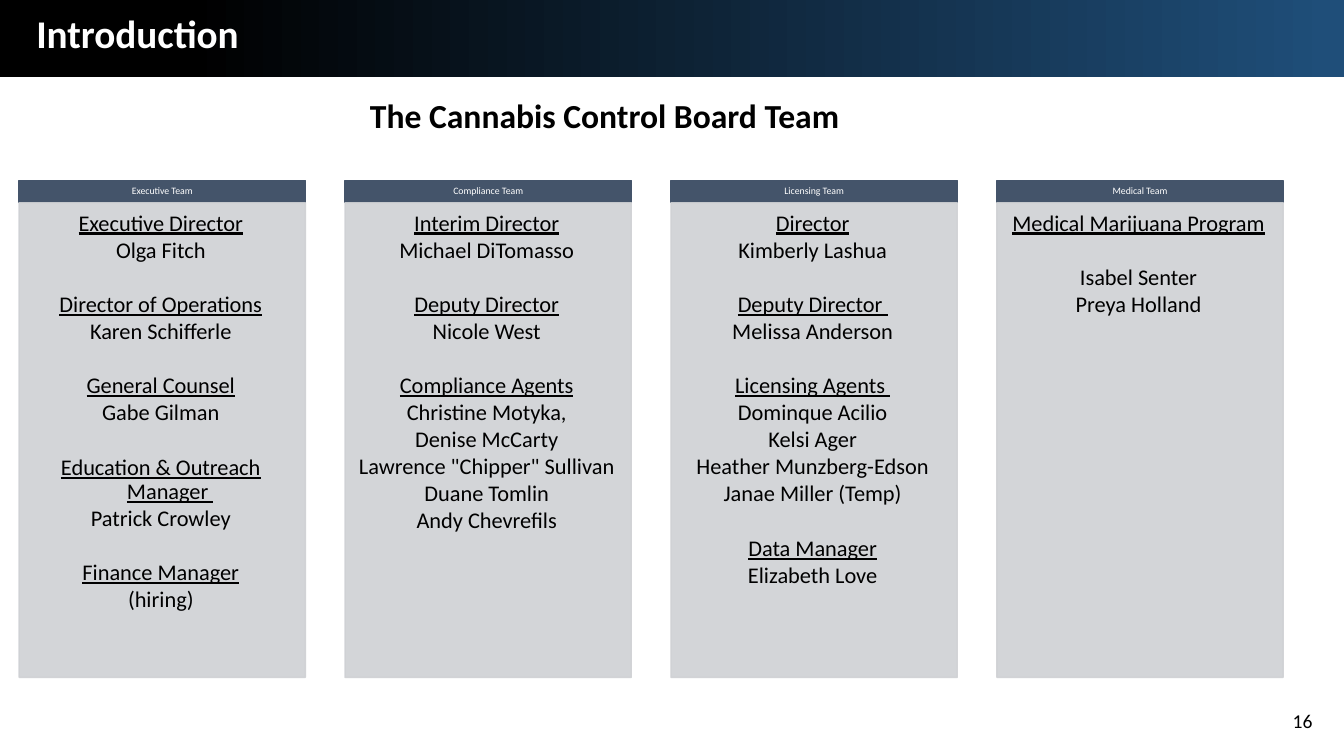
from dataclasses import dataclass

from lxml.etree import SubElement
from pptx import Presentation
from pptx.dml.color import RGBColor
from pptx.enum.shapes import MSO_SHAPE
from pptx.enum.text import MSO_ANCHOR, PP_ALIGN
from pptx.oxml.ns import qn
from pptx.shapes.autoshape import Shape
from pptx.slide import Slide
from pptx.text.text import TextFrame
from pptx.util import Pt

LEFT, STEP, WIDTH = 13.7, 232.8, 204.5
TOP, HEAD, BODY = 128.9, 15.9, 339.1
TIGHT, GAP = 2, 21.6


@dataclass
class Role:
    """A job title and the people who hold it."""
    title: str
    people: list[str]
    gap: float = TIGHT


@dataclass
class Team:
    """A column of the team chart."""
    name: str
    roles: list[Role]


TEAMS = [
    Team("Executive Team", [
        Role("Executive Director", ["Olga Fitch"]),
        Role("Director of Operations", ["Karen Schifferle"]),
        Role("General Counsel", ["Gabe Gilman"]),
        Role("Education & Outreach Manager ", ["Patrick Crowley"]),
        Role("Finance Manager", ["(hiring)"]),
    ]),
    Team("Compliance Team", [
        Role("Interim Director", ["Michael DiTomasso"]),
        Role("Deputy Director", ["Nicole West"]),
        Role("Compliance Agents", [
            "Christine Motyka,", "Denise McCarty", 'Lawrence "Chipper" Sullivan',
            "Duane Tomlin", "Andy Chevrefils"]),
    ]),
    Team("Licensing Team", [
        Role("Director", ["Kimberly Lashua"]),
        Role("Deputy Director ", ["Melissa Anderson"]),
        Role("Licensing Agents ", [
            "Dominque Acilio", "Kelsi Ager", "Heather Munzberg-Edson",
            "Janae Miller (Temp)"]),
        Role("Data Manager", ["Elizabeth Love"]),
    ]),
    Team("Medical Team", [
        Role("Medical Marijuana Program", ["Isabel Senter", "Preya Holland"], GAP),
    ]),
]


def rgb(code: str) -> RGBColor:
    """Turn a hex string into a colour."""
    return RGBColor.from_string(code)


def write(frame: TextFrame, text: str, *, size: float, color: str = "000000",
          bold: bool = False, under: bool = False, align: PP_ALIGN = PP_ALIGN.CENTER,
          before: float = 0, lead: float = 1, hang: float = 0) -> None:
    """Add one formatted paragraph to a frame."""
    para = frame.add_paragraph() if frame.text else frame.paragraphs[0]
    para.alignment = align
    para.line_spacing = lead
    para.space_before, para.space_after = Pt(before), Pt(0)
    if hang:
        props = para._p.get_or_add_pPr()
        props.set("marL", str(Pt(hang)))
        props.set("indent", str(Pt(-hang)))
    run = para.add_run()
    run.text = text
    font = run.font
    font.name, font.size = "Calibri", Pt(size)
    font.bold, font.underline = bold, under
    font.color.rgb = rgb(color)


def setup(frame: TextFrame, anchor: MSO_ANCHOR,
          insets: tuple[float, float, float, float] = (7.2, 3.6, 7.2, 3.6)) -> TextFrame:
    """Set wrap, anchor and insets of a frame."""
    frame.word_wrap = True
    frame.vertical_anchor = anchor
    (frame.margin_left, frame.margin_top,
     frame.margin_right, frame.margin_bottom) = map(Pt, insets)
    return frame


def add_box(slide: Slide, x: float, y: float, w: float, h: float,
            anchor: MSO_ANCHOR = MSO_ANCHOR.TOP) -> TextFrame:
    """Add a text box and return its frame."""
    box = slide.shapes.add_textbox(Pt(x), Pt(y), Pt(w), Pt(h))
    return setup(box.text_frame, anchor)


def add_rect(slide: Slide, x: float, y: float, w: float, h: float,
             color: str, alpha: int = 100) -> Shape:
    """Add a rectangle with a fill and line of one colour."""
    rect = slide.shapes.add_shape(MSO_SHAPE.RECTANGLE, Pt(x), Pt(y), Pt(w), Pt(h))
    rect.shadow.inherit = False
    rect.fill.solid()
    rect.fill.fore_color.rgb = rgb(color)
    rect.line.color.rgb = rgb(color)
    rect.line.width = Pt(1)
    if alpha < 100:
        for node in list(rect.element.iter(qn("a:srgbClr"))):
            SubElement(node, qn("a:alpha")).set("val", str(alpha * 1000))
    return rect


def add_band(slide: Slide) -> None:
    """Add the top band with the slide title on it."""
    band = add_rect(slide, 0, 0, 960, 55.2, "000000")
    band.line.fill.background()
    band.fill.gradient()
    band.fill.gradient_angle = 0
    for stop, (place, color) in zip(band.fill.gradient_stops,
                                    [(0.14, "000000"), (0.99, "1F4E79")]):
        stop.position = place
        stop.color.rgb = rgb(color)
    title = slide.shapes.title
    title.element.addprevious(band.element)
    title.left, title.top, title.width, title.height = map(Pt, (18.7, 2.9, 506, 41))
    write(setup(title.text_frame, MSO_ANCHOR.TOP), "Introduction", size=28,
          color="FFFFFF", bold=True, align=PP_ALIGN.LEFT)


def add_team(slide: Slide, team: Team, x: float) -> None:
    """Add one team column."""
    head = add_rect(slide, x, TOP, WIDTH, HEAD, "44546A")
    write(setup(head.text_frame, MSO_ANCHOR.MIDDLE, (3.6, 2, 3.6, 2)), team.name,
          size=7, color="FFFFFF", lead=0.9)
    panel = add_rect(slide, x, TOP + HEAD, WIDTH, BODY, "CFD1D4", 90)
    frame = setup(panel.text_frame, MSO_ANCHOR.TOP, (6.5, 6.5, 8.6, 10))
    for i, role in enumerate(team.roles):
        write(frame, role.title, size=16, under=True, lead=0.9, hang=13.5,
              before=GAP if i else 0)
        for j, person in enumerate(role.people):
            write(frame, person, size=16, lead=0.9, hang=13.5,
                  before=TIGHT if j else role.gap)


def main() -> None:
    """Build the slide and save it."""
    deck = Presentation()
    deck.slide_width, deck.slide_height = Pt(960), Pt(540)
    slide = deck.slides.add_slide(deck.slide_layouts[5])
    add_band(slide)
    write(add_box(slide, 43.9, 64.1, 776, 36), "The Cannabis Control Board Team",
          size=24, bold=True)
    for i, team in enumerate(TEAMS):
        add_team(slide, team, LEFT + i * STEP)
    write(add_box(slide, 728.6, 500.4, 216, 28.8, MSO_ANCHOR.MIDDLE), "16",
          size=14, align=PP_ALIGN.RIGHT)
    deck.save("out.pptx")


if __name__ == "__main__":
    main()
